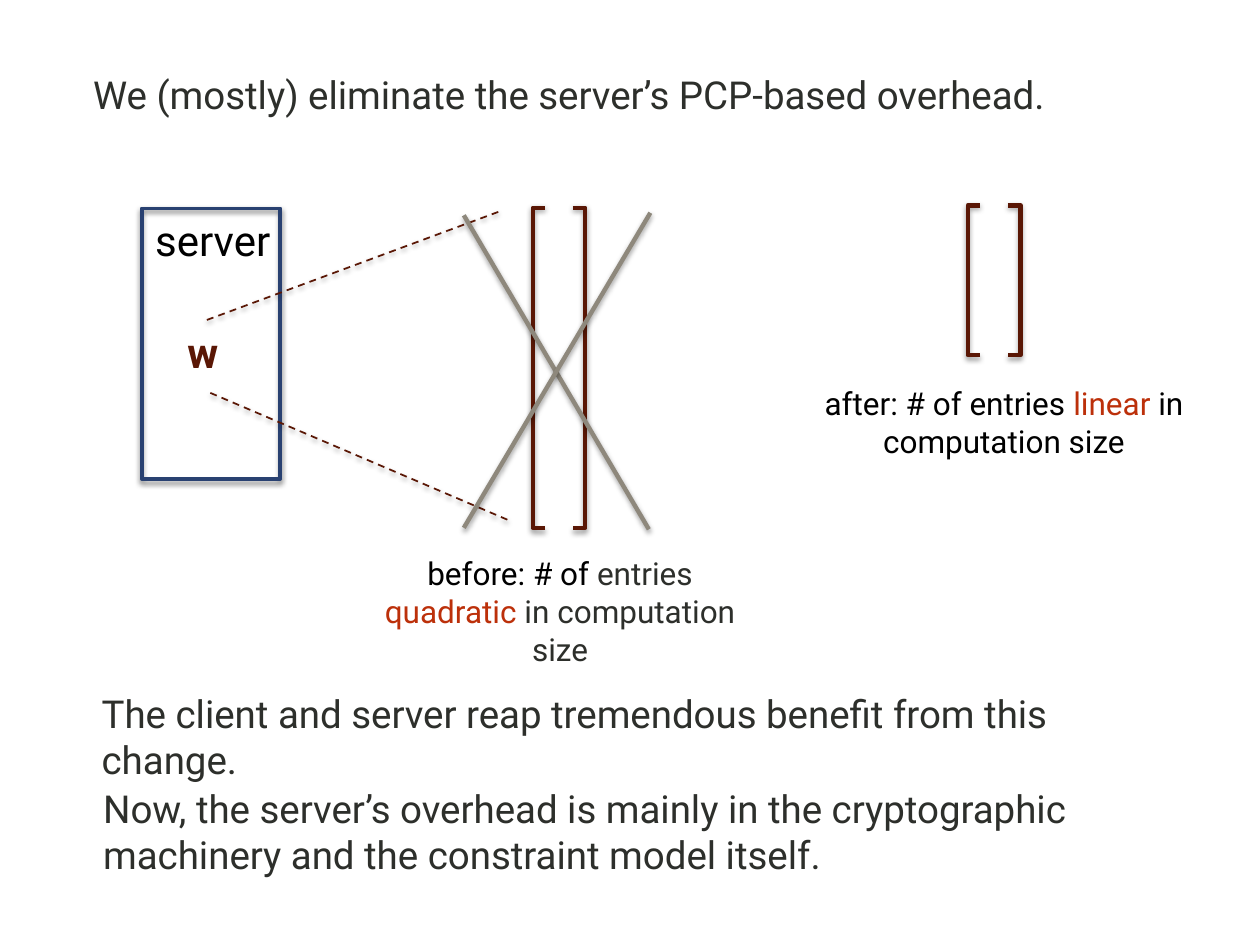
from typing import NamedTuple

from lxml import etree
from pptx import Presentation
from pptx.dml.color import RGBColor
from pptx.enum.dml import MSO_LINE
from pptx.enum.shapes import MSO_CONNECTOR, MSO_SHAPE
from pptx.enum.text import PP_ALIGN
from pptx.oxml.ns import qn
from pptx.util import Cm, Pt

RECT = MSO_SHAPE.RECTANGLE
LEFT_BRACKET, RIGHT_BRACKET = MSO_SHAPE.LEFT_BRACKET, MSO_SHAPE.RIGHT_BRACKET
STRAIGHT = MSO_CONNECTOR.STRAIGHT
DASH = MSO_LINE.DASH
LEFT, CENTER = PP_ALIGN.LEFT, PP_ALIGN.CENTER

FONT = "Roboto"
BLACK, DARK, MAROON = "000000", "2D2F2B", "5A1705"
RED, BLUE, GRAY = "BC300A", "294171", "8E887C"
BRACKET_W, BRACKET_STEP = 0.25, 0.81


class Label(NamedTuple):
    x: float
    y: float
    w: float
    h: float
    size: int
    runs: list[tuple[str, str]]
    align: PP_ALIGN = LEFT
    bold: bool = False


class Vector(NamedTuple):
    x: float
    y: float
    h: float


class Stroke(NamedTuple):
    x1: float
    y1: float
    x2: float
    y2: float
    color: str
    width: float
    dash: MSO_LINE | None = None


# Lengths in centimetres
LABELS = [
    Label(1.63, 1.3, 21.89, 1.19, 22,
          [("We (mostly) eliminate the server’s PCP-based overhead.", DARK)]),
    Label(2.77, 4.19, 3.04, 1.27, 24, [("server", BLACK)], CENTER),
    Label(3.53, 6.45, 1.24, 1.27, 24, [("w", MAROON)], bold=True),
    Label(7, 11.05, 8.58, 1.8, 18,
          [("before: # of ", BLACK), ("entries ", DARK),
           ("quadratic ", RED), ("in computation size", DARK)], CENTER),
    Label(16.28, 7.62, 7.92, 1.8, 18,
          [("after: # of entries ", BLACK), ("linear ", RED),
           ("in computation size", BLACK)], CENTER),
    Label(1.8, 13.79, 21.77, 1.19, 22,
          [("The client and server reap tremendous benefit from this change.", DARK)]),
    Label(1.83, 15.7, 21.77, 2.13, 22,
          [("Now, the server’s overhead is mainly in the cryptographic "
            "machinery and the constraint model itself.", DARK)]),
]
VECTORS = [Vector(10.74, 4.19, 6.45), Vector(19.51, 4.14, 3.02)]
STROKES = [
    # Expansion of w into the vector
    Stroke(4.17, 6.45, 10.13, 4.24, MAROON, 1, DASH),
    Stroke(4.24, 7.92, 10.26, 10.49, MAROON, 1, DASH),
    # Cross over the old vector
    Stroke(9.35, 4.34, 13.08, 10.67, GRAY, 2.5),
    Stroke(13.11, 4.29, 9.35, 10.64, GRAY, 2.5),
]


def rgb(color: str) -> RGBColor:
    return RGBColor.from_string(color)


def add_shadow(s, blur: float, dist: float, opacity: int) -> None:
    """Give a shape or connector a soft black shadow straight below it."""
    effects = etree.SubElement(s._element.spPr, qn("a:effectLst"))
    shadow = etree.SubElement(effects, qn("a:outerShdw"), blurRad=str(Pt(blur)),
                              dist=str(Pt(dist)), dir="5400000", rotWithShape="0")
    color = etree.SubElement(shadow, qn("a:srgbClr"), val=BLACK)
    etree.SubElement(color, qn("a:alpha"), val=str(opacity * 1000))


def add_outline(sp, kind, x: float, y: float, w: float, h: float,
                color: str, width: float):
    s = sp.add_shape(kind, Cm(x), Cm(y), Cm(w), Cm(h))
    s.fill.background()
    s.line.color.rgb = rgb(color)
    s.line.width = Pt(width)
    return s


def add_vector(sp, vector: Vector) -> None:
    for i, kind in enumerate((LEFT_BRACKET, RIGHT_BRACKET)):
        s = add_outline(sp, kind, vector.x + i * BRACKET_STEP, vector.y,
                        BRACKET_W, vector.h, MAROON, 2.5)
        s.adjustments[0] = 0
        add_shadow(s, 3.1, 1.6, 38)


def add_stroke(sp, stroke: Stroke) -> None:
    s = sp.add_connector(STRAIGHT, Cm(stroke.x1), Cm(stroke.y1),
                         Cm(stroke.x2), Cm(stroke.y2))
    s.line.color.rgb = rgb(stroke.color)
    s.line.width = Pt(stroke.width)
    if stroke.dash:
        s.line.dash_style = stroke.dash
    add_shadow(s, 3.1, 1.6, 38)


def add_label(sp, label: Label) -> None:
    tf = sp.add_textbox(Cm(label.x), Cm(label.y), Cm(label.w), Cm(label.h)).text_frame
    tf.word_wrap = True
    p = tf.paragraphs[0]
    p.alignment = label.align
    p.font.name, p.font.size, p.font.bold = FONT, Pt(label.size), label.bold
    for text, color in label.runs:
        r = p.add_run()
        r.text = text
        r.font.color.rgb = rgb(color)


def main() -> None:
    prs = Presentation()
    prs.slide_width, prs.slide_height = Cm(25.4), Cm(19.05)
    sp = prs.slides.add_slide(prs.slide_layouts[6]).shapes

    # Server box
    server = add_outline(sp, RECT, 2.86, 4.2, 2.79, 5.46, BLUE, 2)
    add_shadow(server, 3, 2, 50)

    # Vectors before and after, with the lines over them
    for vector in VECTORS:
        add_vector(sp, vector)
    for stroke in STROKES:
        add_stroke(sp, stroke)

    # Text
    for label in LABELS:
        add_label(sp, label)

    prs.save("out.pptx")


if __name__ == "__main__":
    main()
